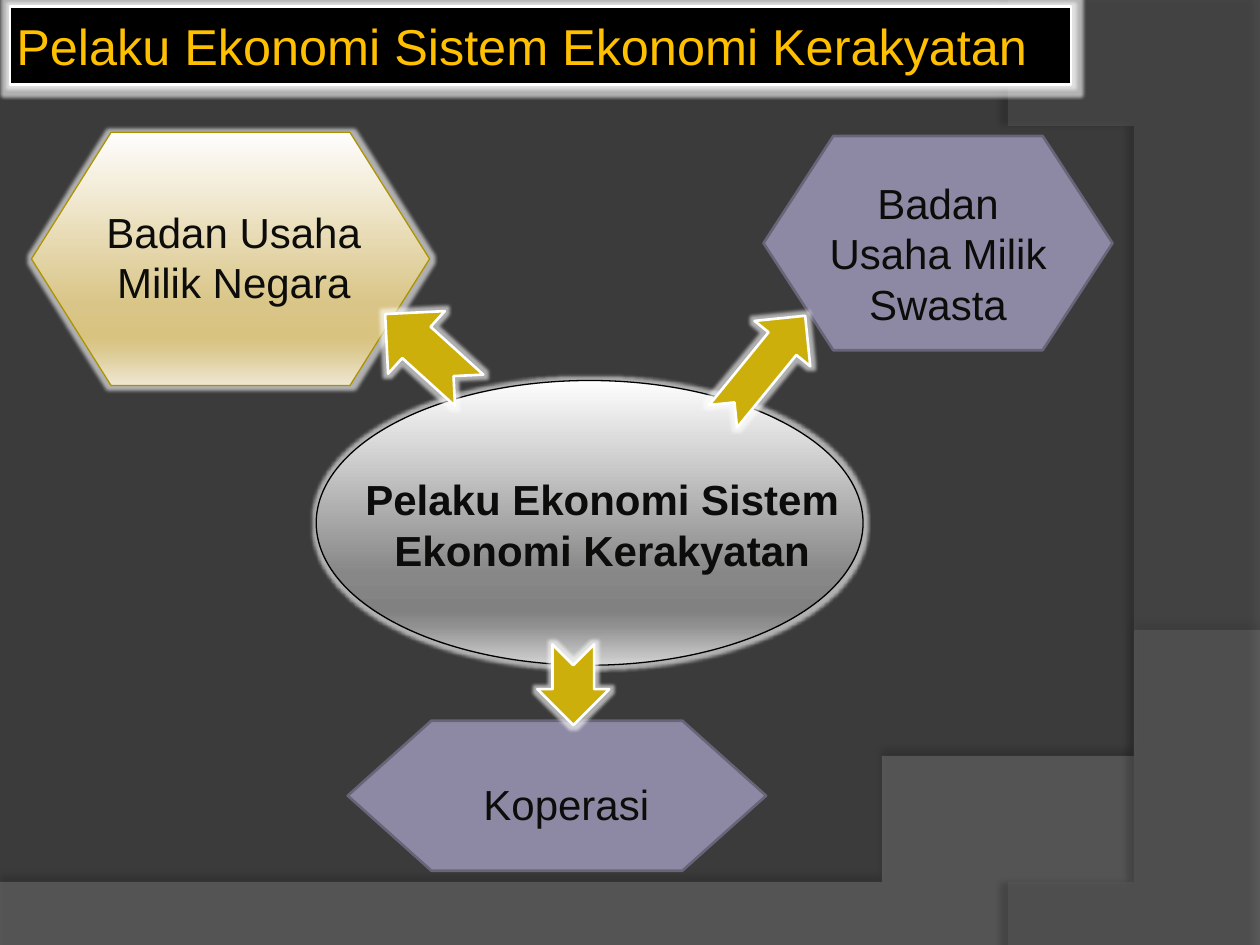
from lxml import etree
from pptx import Presentation
from pptx.dml.color import RGBColor
from pptx.enum.shapes import MSO_SHAPE
from pptx.enum.text import MSO_ANCHOR, PP_ALIGN
from pptx.oxml.ns import qn
from pptx.util import Inches, Pt

RECTANGLE, ELLIPSE = MSO_SHAPE.RECTANGLE, MSO_SHAPE.OVAL
HEXAGON, ARROW = MSO_SHAPE.FLOWCHART_PREPARATION, MSO_SHAPE.NOTCHED_RIGHT_ARROW
LEFT, CENTER = PP_ALIGN.LEFT, PP_ALIGN.CENTER
TOP, MIDDLE = MSO_ANCHOR.TOP, MSO_ANCHOR.MIDDLE

BACKGROUND = "3B3B3B"
TITLE = "Pelaku Ekonomi Sistem Ekonomi Kerakyatan"
GRAY = [(0, "FEFEFE"), (68, "878787"), (81, "818181"), (86, "909090"), (100, "D3D3D3")]
GOLD = [(0, "FFFEFE"), (68, "D9C587"), (81, "D8C381"), (86, "DBC990"), (100, "EFE7D3")]
PURPLE = "8D89A4"
LABEL = {"size": Pt(24), "name": "Arial", "bold": False}
HEADING = {"size": Pt(28.8), "name": "Arial", "bold": False}

# Curved bands: start, then line ends (1 point) or Bezier segments (3 points)
BANDS = [
    {"start": (0, 7.05),
     "segments": [[(0, 7.5)], [(10, 7.5)], [(10, 5.2)],
                  [(5.59, 7.29), (3.91, 7.19), (0, 7.05)]],
     "fill": "7F7F7F", "opacity": 45, "shadow": (35, 3.5, 270)},
    {"start": (10, 0.02),
     "segments": [[(10, 7.5)], [(8.21, 7.5)],
                  [(9.35, 6.19), (10.18, 3), (8, 0)]],
     "fill": "5E5E5E", "opacity": 40, "shadow": (45, 4, 180)},
]

# Each actor: shape, its label box and the arrow that points to it
ACTORS = [
    {"text": TITLE, "shape": ELLIPSE, "box": (2.51, 3.02, 4.34, 2.26),
     "fill": GRAY, "line": ("000000", 0.75), "label": (2.5, 3.71, 4.56, 2.71),
     "bold": True},
    {"text": "Badan Usaha Milik Swasta", "shape": HEXAGON, "box": (6.06, 1.08, 2.77, 1.7),
     "fill": PURPLE, "line": ("686579", 1.5), "label": (6.36, 1.36, 2.17, 1.83),
     "arrow": (5.55, 2.62, 1.03, 0.57), "rotation": 309.2},
    {"text": "Badan Usaha Milik Negara", "shape": HEXAGON, "box": (0.25, 1.05, 3.16, 2.01),
     "fill": GOLD, "line": ("AB9200", 0.75), "label": (0.74, 1.59, 2.23, 1.83),
     "arrow": (2.94, 2.46, 0.9, 0.67), "rotation": 222.2},
    {"text": "Koperasi", "shape": HEXAGON, "box": (2.76, 5.72, 3.32, 1.19),
     "fill": PURPLE, "line": ("686579", 1.5), "label": (3.26, 6.13, 2.47, 0.5),
     "arrow": (4.23, 5.15, 0.64, 0.57), "rotation": 90, "shaft": 0.58},
]


def rgb(color):
    return RGBColor.from_string(color)


def add_color(parent, color, opacity=100):
    element = etree.SubElement(parent, qn("a:srgbClr"), val=color)
    if opacity < 100:
        etree.SubElement(element, qn("a:alpha"), val=str(opacity * 1000))


def add_effect(shape, kind, color, opacity, **lengths):
    shape.shadow.inherit = False
    effects = shape._element.spPr.find(qn("a:effectLst"))
    attributes = {name: str(int(value)) for name, value in lengths.items()}
    add_color(etree.SubElement(effects, qn("a:" + kind), attributes), color, opacity)


def add_glow(shape):
    add_effect(shape, "glow", "FFFFFF", 60, rad=Pt(4))


def paint(shape, fill, line):
    """Fill with one colour or a list of downward gradient stops, and outline."""
    shape.shadow.inherit = False
    if isinstance(fill, str):
        shape.fill.solid()
        shape.fill.fore_color.rgb = rgb(fill)
    else:
        shape.fill.gradient()
        shape.fill.gradient_angle = 270
        stops = next(shape._element.spPr.iter(qn("a:gsLst")))
        for stop in list(stops):
            stops.remove(stop)
        for position, color in fill:
            add_color(etree.SubElement(stops, qn("a:gs"), pos=str(position * 1000)), color)
    color, width = line
    shape.line.color.rgb = rgb(color)
    shape.line.width = Pt(width)


def write(shape, text, color, alignment, anchor, font_format):
    frame = shape.text_frame
    frame.word_wrap = True
    frame.vertical_anchor = anchor
    paragraph = frame.paragraphs[0]
    paragraph.alignment = alignment
    run = paragraph.add_run()
    run.text = text
    run.font.color.rgb = rgb(color)
    for name, value in font_format.items():
        setattr(run.font, name, value)


def bezier(points, steps=40):
    """Sample a cubic curve, leaving out its first point."""
    for step in range(1, steps + 1):
        t = step / steps
        weights = ((1 - t) ** 3, 3 * t * (1 - t) ** 2, 3 * t * t * (1 - t), t ** 3)
        yield tuple(sum(w * p[axis] for w, p in zip(weights, points)) for axis in (0, 1))


def add_band(slide, band):
    points = [band["start"]]
    for segment in band["segments"]:
        points += segment if len(segment) == 1 else bezier([points[-1], *segment])
    builder = slide.shapes.build_freeform(*points[0], scale=Inches(1))
    builder.add_line_segments(points[1:], close=True)
    shape = builder.convert_to_shape()
    shape.fill.solid()
    shape.fill.fore_color.rgb = rgb(band["fill"])
    color = next(shape._element.spPr.iter(qn("a:srgbClr")))
    etree.SubElement(color, qn("a:alpha"), val=str(band["opacity"] * 1000))
    shape.line.fill.background()
    opacity, distance, angle = band["shadow"]
    add_effect(shape, "outerShdw", "000000", opacity,
               blurRad=Pt(4), dist=Pt(distance), dir=angle * 60000)


def add_title(slide):
    title = slide.shapes.add_shape(RECTANGLE, *map(Inches, (0.08, 0.05, 8.42, 0.62)))
    paint(title, "000000", ("FFFFFF", 1.5))
    add_glow(title)
    for side in ("left", "right", "top", "bottom"):
        setattr(title.text_frame, "margin_" + side, Inches(0.05))
    write(title, TITLE, "FFC000", LEFT, MIDDLE, HEADING)


def add_actor(slide, actor):
    shapes = slide.shapes.add_group_shape().shapes
    body = shapes.add_shape(actor["shape"], *map(Inches, actor["box"]))
    paint(body, actor["fill"], actor["line"])
    if actor["fill"] != PURPLE:
        add_glow(body)
    label = shapes.add_textbox(*map(Inches, actor["label"]))
    write(label, actor["text"], "0C0D0A", CENTER, TOP,
          {**LABEL, "bold": actor.get("bold", False)})
    if "arrow" in actor:
        arrow = shapes.add_shape(ARROW, *map(Inches, actor["arrow"]))
        arrow.rotation = actor["rotation"]
        arrow.adjustments[0] = actor.get("shaft", 0.5)
        paint(arrow, "CCAF0A", ("FFFFFF", 1.5))
        add_glow(arrow)


def main():
    presentation = Presentation()
    presentation.slide_width, presentation.slide_height = Inches(10), Inches(7.5)
    slide = presentation.slides.add_slide(presentation.slide_layouts[6])
    slide.background.fill.solid()
    slide.background.fill.fore_color.rgb = rgb(BACKGROUND)
    for band in BANDS:
        add_band(slide, band)
    add_title(slide)
    for actor in ACTORS:
        add_actor(slide, actor)
    presentation.save("out.pptx")


if __name__ == "__main__":
    main()
